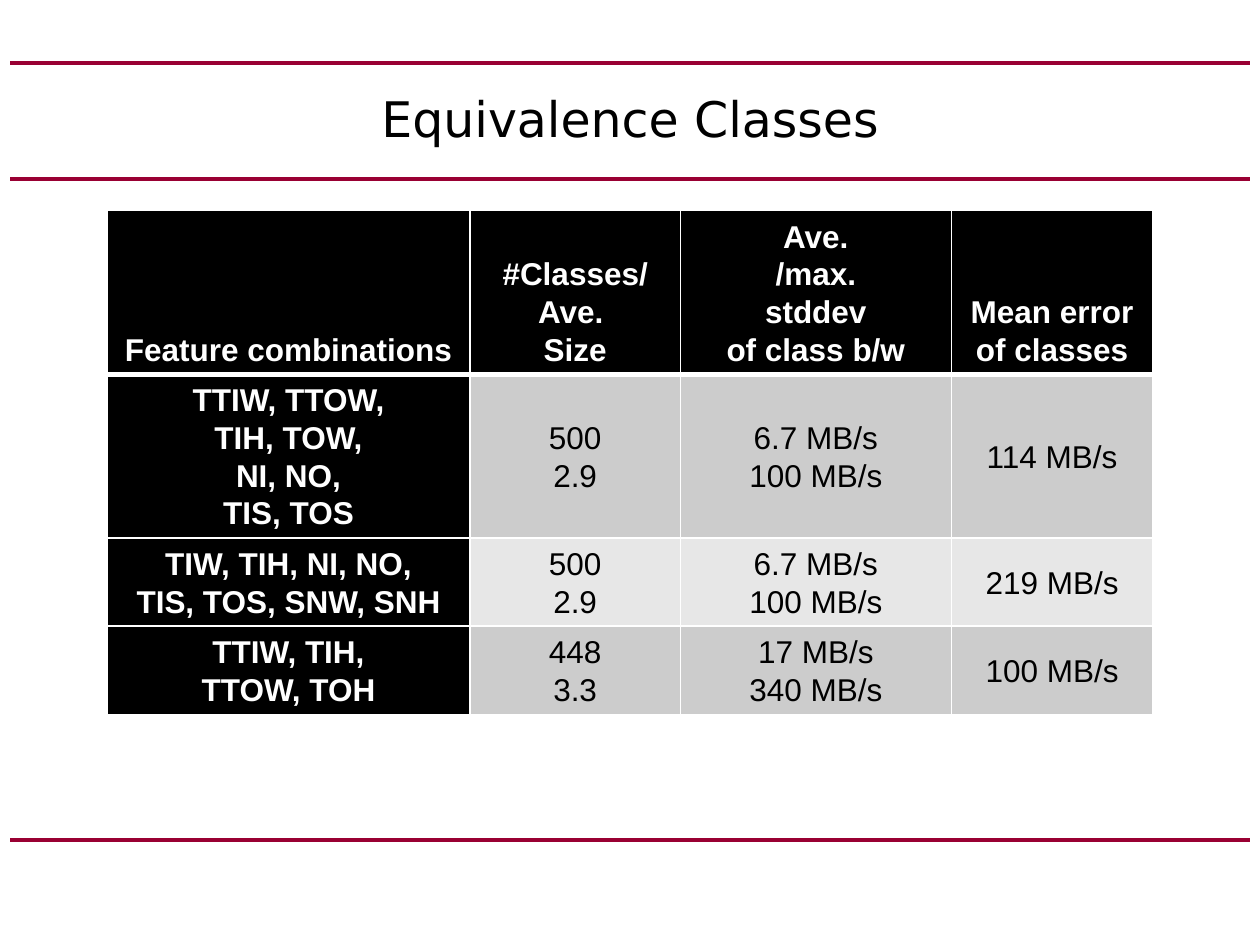
from typing import NamedTuple

from lxml.etree import SubElement
from pptx import Presentation
from pptx.dml.color import RGBColor
from pptx.enum.shapes import MSO_CONNECTOR as Connector
from pptx.enum.text import MSO_ANCHOR as Anchor, PP_ALIGN as Align
from pptx.oxml import parse_xml
from pptx.oxml.ns import nsdecls, qn
from pptx.util import Inches, Pt

BLACK = RGBColor(0x00, 0x00, 0x00)
WHITE = RGBColor(0xFF, 0xFF, 0xFF)
CRIMSON = RGBColor(0x99, 0x00, 0x33)
DARK_BAND = RGBColor(0xCC, 0xCC, 0xCC)
LIGHT_BAND = RGBColor(0xE7, 0xE7, 0xE7)

RULE_HEIGHTS = (0.5, 1.42, 6.67)
COLUMN_WIDTHS = (2.88, 1.67, 2.15, 1.6)


class TableRow(NamedTuple):
    height: float
    entries: tuple[str, ...]


ROWS = (
    TableRow(1.3, (
        "Feature combinations",
        "#Classes/\nAve. \nSize",
        "Ave.\n/max.\nstddev\nof class b/w",
        "Mean error\nof classes",
    )),
    TableRow(1.3, (
        "TTIW, TTOW,\nTIH, TOW,\nNI, NO,\nTIS, TOS",
        "500\n2.9",
        "6.7 MB/s\n100 MB/s",
        "114 MB/s",
    )),
    TableRow(0.7, (
        "TIW, TIH, NI, NO,\nTIS, TOS, SNW, SNH",
        "500\n2.9",
        "6.7 MB/s\n100 MB/s",
        "219 MB/s",
    )),
    TableRow(0.7, (
        "TTIW, TIH,\nTTOW, TOH",
        "448\n3.3",
        "17 MB/s\n340 MB/s",
        "100 MB/s",
    )),
)


def add_rule(slide, y: float) -> None:
    rule = slide.shapes.add_connector(
        Connector.STRAIGHT, Inches(0.08), Inches(y), Inches(9.92), Inches(y)
    )
    rule.line.color.rgb = CRIMSON
    rule.line.width = Pt(2.25)
    SubElement(rule._element.spPr, qn("a:effectLst"))


def format_title(title) -> None:
    title.left, title.top = Inches(0.5), Inches(0.5)
    title.width, title.height = Inches(9), Inches(0.87)
    title.text = "Equivalence Classes"
    title.text_frame.vertical_anchor = Anchor.MIDDLE
    heading = title.text_frame.paragraphs[0]
    heading.alignment = Align.CENTER
    heading.font.name = "DejaVu Sans"
    heading.font.size = Pt(28)
    heading.font.color.rgb = BLACK


def add_borders(cell, top: float, bottom: float) -> None:
    properties = cell._tc.get_or_add_tcPr()
    sides = (("lnL", 1), ("lnR", 1), ("lnT", top), ("lnB", bottom))
    for position, (side, width) in enumerate(sides):
        border = parse_xml(
            f'<a:{side} {nsdecls("a")} w="{Pt(width)}"><a:solidFill>'
            f'<a:srgbClr val="{WHITE}"/></a:solidFill></a:{side}>'
        )
        properties.insert(position, border)


def fill_cell(cell, entry: str, row: int, column: int) -> None:
    is_label = row == 0 or column == 0
    band = DARK_BAND if row % 2 else LIGHT_BAND
    cell.fill.solid()
    cell.fill.fore_color.rgb = BLACK if is_label else band
    cell.vertical_anchor = Anchor.BOTTOM if row == 0 else Anchor.MIDDLE
    cell.text = entry
    for paragraph in cell.text_frame.paragraphs:
        paragraph.alignment = Align.CENTER
        paragraph.line_spacing = 1.07
        paragraph.font.name = "Arial"
        paragraph.font.size = Pt(18)
        paragraph.font.bold = is_label
        paragraph.font.color.rgb = WHITE if is_label else BLACK
    add_borders(cell, top=3 if row == 1 else 1, bottom=3 if row == 0 else 1)


def add_class_table(slide) -> None:
    table = slide.shapes.add_table(
        len(ROWS), len(COLUMN_WIDTHS), Inches(0.85), Inches(1.67),
        Inches(sum(COLUMN_WIDTHS)), Inches(sum(row.height for row in ROWS)),
    ).table
    table.horz_banding = False
    for column, width in zip(table.columns, COLUMN_WIDTHS):
        column.width = Inches(width)
    for row_index, row in enumerate(ROWS):
        table.rows[row_index].height = Inches(row.height)
        for column_index, entry in enumerate(row.entries):
            cell = table.cell(row_index, column_index)
            fill_cell(cell, entry, row_index, column_index)


def main() -> None:
    presentation = Presentation()
    presentation.slide_width = Inches(10)
    presentation.slide_height = Inches(7.5)
    slide = presentation.slides.add_slide(presentation.slide_layouts[5])
    for y in RULE_HEIGHTS:
        add_rule(slide, y)
    format_title(slide.shapes.title)
    add_class_table(slide)
    presentation.save("out.pptx")


if __name__ == "__main__":
    main()
